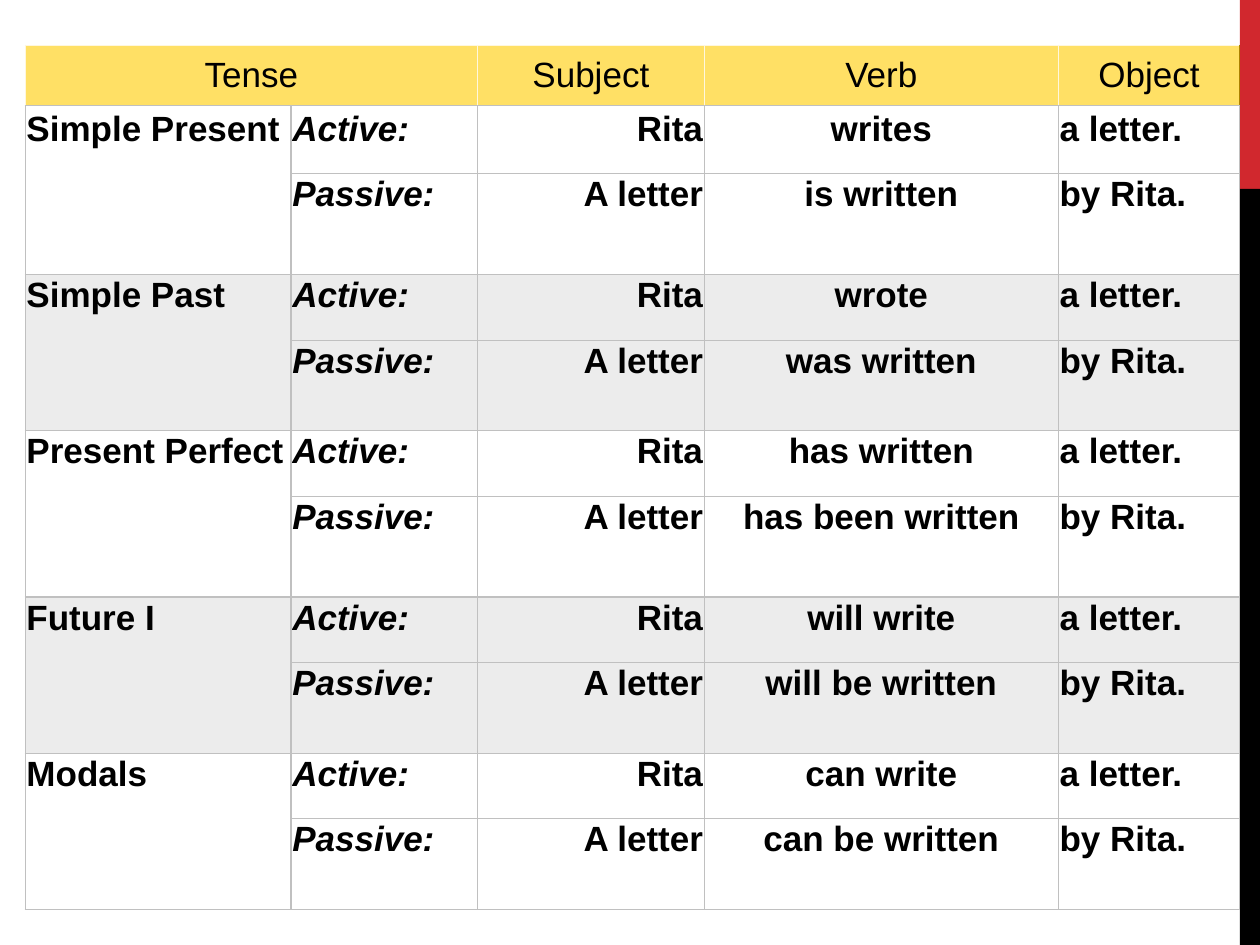
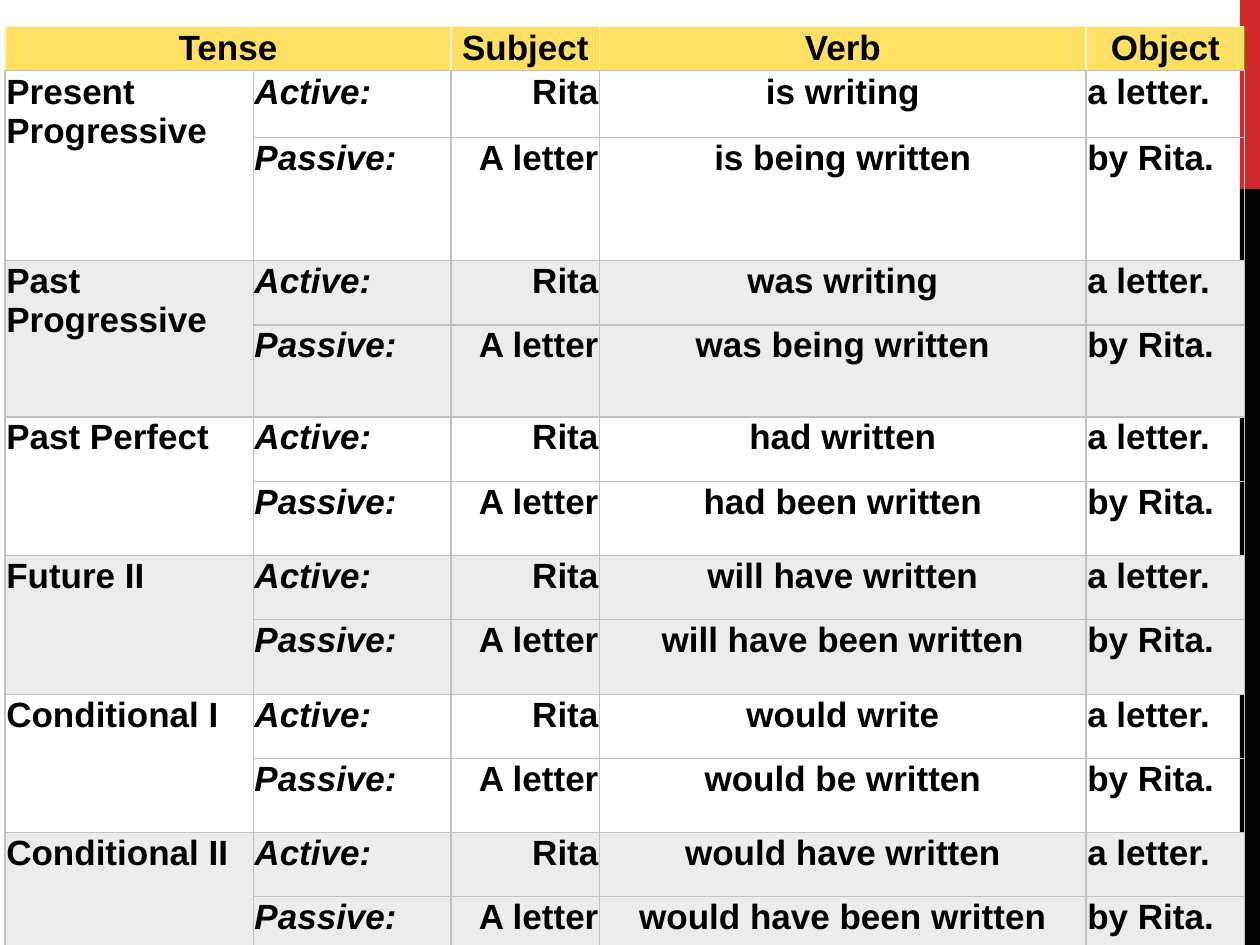
import dataclasses

import lxml.etree
import pptx
import pptx.dml.color
import pptx.enum.shapes
import pptx.enum.text
import pptx.oxml.ns
import pptx.util

Inches = pptx.util.Inches
ALIGN = pptx.enum.text.PP_ALIGN
ANCHOR = pptx.enum.text.MSO_ANCHOR


@dataclasses.dataclass(frozen=True)
class Theme:
    font: str = "Arial"
    text_size: int = 20
    border_width: float = 0.75
    text: str = "000000"
    red_band: str = "D1282E"
    black_band: str = "000000"
    header: str = "FFE065"
    shaded: str = "ECECEC"
    border: str = "C0C0C0"
    header_border: str = "FFF7DD"
    header_edge: str = "AA8000"
    table_style: str = "{2D5ABB26-0587-4C30-8999-92F81FD0307C}"


theme = Theme()


def set_borders(cell, colors):
    properties = cell._tc.get_or_add_tcPr()
    for side, color in zip("LRTB", colors):
        line = lxml.etree.SubElement(properties, pptx.oxml.ns.qn(f"a:ln{side}"))
        line.set("w", str(pptx.util.Pt(theme.border_width)))
        fill = lxml.etree.SubElement(line, pptx.oxml.ns.qn("a:solidFill"))
        lxml.etree.SubElement(fill, pptx.oxml.ns.qn("a:srgbClr")).set("val", color)


def write_cell(cell, text, alignment, bold, italic):
    paragraph = cell.text_frame.paragraphs[0]
    paragraph.alignment = alignment
    run = paragraph.add_run()
    run.text = text
    run.font.name = theme.font
    run.font.size = pptx.util.Pt(theme.text_size)
    run.font.bold = bold
    run.font.italic = italic
    run.font.color.rgb = pptx.dml.color.RGBColor.from_string(theme.text)


headings = ["Tense", "", "Subject", "Verb", "Object"]
alignments = [ALIGN.LEFT, ALIGN.LEFT, ALIGN.RIGHT, ALIGN.CENTER, ALIGN.LEFT]
voices = [("Active:", "Rita", "a letter."), ("Passive:", "A letter", "by Rita.")]

tense_tables = [
    {
        "position": (0.2, 0.36),
        "columns": [2.11, 1.48, 1.8, 2.81, 1.44],
        "rows": [0.48, 0.54, 0.8, 0.52, 0.72, 0.52, 0.8, 0.52, 0.72, 0.52, 0.72],
        "header_bold": False,
        "header_margin": 0.01,
        "first_row_margin": 0.03,
        "tenses": [
            ("Simple Present", "writes", "is written"),
            ("Simple Past", "wrote", "was written"),
            ("Present Perfect", "has written", "has been written"),
            ("Future I", "will write", "will be written"),
            ("Modals", "can write", "can be written"),
        ],
    },
    {
        "position": (0.04, 0.21),
        "columns": [1.97, 1.57, 1.18, 3.86, 1.26],
        "rows": [0.35, 0.53, 0.98, 0.51, 0.73] + [0.51, 0.59] * 3 + [0.51, 0.41],
        "header_bold": True,
        "header_margin": 0,
        "first_row_margin": 0.02,
        "tenses": [
            ("Present Progressive", "is writing", "is being written"),
            ("Past Progressive", "was writing", "was being written"),
            ("Past Perfect", "had written", "had been written"),
            ("Future II", "will have written", "will have been written"),
            ("Conditional I", "would write", "would be written"),
            ("Conditional II", "would have written", "would have been written"),
        ],
    },
]

presentation = pptx.Presentation()
presentation.slide_width = Inches(10)
presentation.slide_height = Inches(7.5)
blank_layout = presentation.slide_layouts[6]

for tense_table in tense_tables:
    slide = presentation.slides.add_slide(blank_layout)

    for top, height, color in [(0, 1.5, theme.red_band), (1.5, 6, theme.black_band)]:
        band = slide.shapes.add_shape(
            pptx.enum.shapes.MSO_SHAPE.RECTANGLE,
            Inches(9.84), Inches(top), Inches(0.16), Inches(height),
        )
        band.shadow.inherit = False
        band.fill.solid()
        band.fill.fore_color.rgb = pptx.dml.color.RGBColor.from_string(color)
        band.line.fill.background()

    columns, rows = tense_table["columns"], tense_table["rows"]
    left, top = tense_table["position"]
    frame = slide.shapes.add_table(
        len(rows), len(columns),
        Inches(left), Inches(top), Inches(sum(columns)), Inches(sum(rows)),
    )
    table = frame.table
    table.first_row = False
    table.horz_banding = False
    table._tbl.tblPr.find(pptx.oxml.ns.qn("a:tableStyleId")).text = theme.table_style
    for column, width in zip(table.columns, columns):
        column.width = Inches(width)
    for row, height in zip(table.rows, rows):
        row.height = Inches(height)

    for row_index in range(len(rows)):
        is_header = row_index == 0
        is_shaded = (row_index - 1) // 2 % 2 == 1
        for column_index in range(len(columns)):
            cell = table.cell(row_index, column_index)
            cell.margin_left = cell.margin_right = Inches(0.01)
            cell.margin_top = cell.margin_bottom = Inches(0.01)
            if is_header:
                cell.margin_top = cell.margin_bottom = Inches(tense_table["header_margin"])
                cell.vertical_anchor = ANCHOR.MIDDLE
                is_last = column_index == len(columns) - 1
                right = theme.header_edge if is_last else theme.header_border
                set_borders(cell, [theme.header_border, right, theme.header_border, theme.border])
            else:
                if row_index == 1:
                    cell.margin_top = Inches(tense_table["first_row_margin"])
                cell.vertical_anchor = ANCHOR.TOP
                set_borders(cell, [theme.border] * 4)
            if is_header or is_shaded:
                cell.fill.solid()
                color = theme.header if is_header else theme.shaded
                cell.fill.fore_color.rgb = pptx.dml.color.RGBColor.from_string(color)
            else:
                cell.fill.background()

    table.cell(0, 0).merge(table.cell(0, 1))
    for column_index, heading in enumerate(headings):
        if heading:
            write_cell(table.cell(0, column_index), heading, ALIGN.CENTER,
                       tense_table["header_bold"], False)

    for tense_index, (tense, *verbs) in enumerate(tense_table["tenses"]):
        first_row = 1 + 2 * tense_index
        table.cell(first_row, 0).merge(table.cell(first_row + 1, 0))
        write_cell(table.cell(first_row, 0), tense, alignments[0], True, False)
        for voice_index, ((voice, subject, target), verb) in enumerate(zip(voices, verbs)):
            for column_index, text in enumerate([voice, subject, verb, target], start=1):
                write_cell(table.cell(first_row + voice_index, column_index), text,
                           alignments[column_index], True, column_index == 1)

presentation.save("out.pptx")
